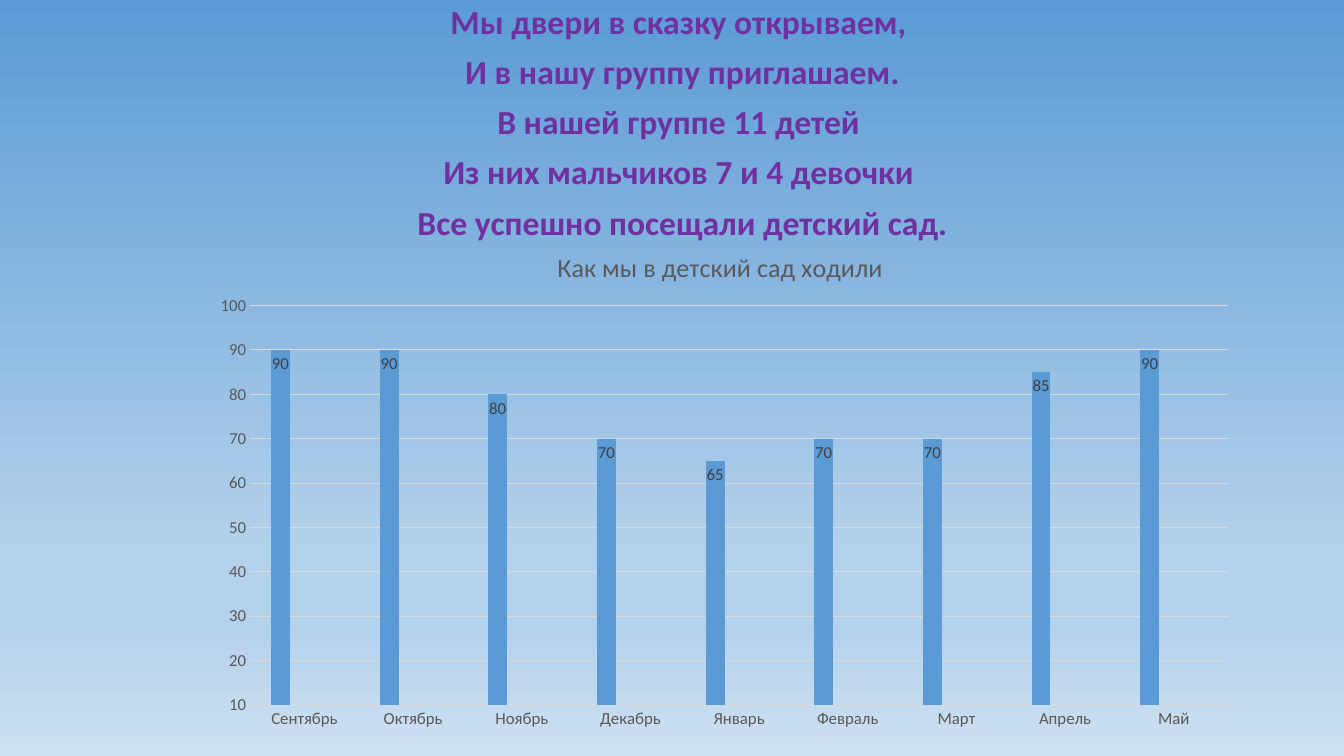
from lxml import etree
from pptx import Presentation
from pptx.chart.data import CategoryChartData
from pptx.dml.color import RGBColor
from pptx.enum.chart import XL_CHART_TYPE, XL_LABEL_POSITION, XL_TICK_MARK
from pptx.enum.text import MSO_ANCHOR, MSO_AUTO_SIZE, PP_ALIGN
from pptx.oxml.ns import qn
from pptx.util import Inches, Pt

COLUMNS = XL_CHART_TYPE.COLUMN_CLUSTERED
INSIDE_END = XL_LABEL_POSITION.INSIDE_END
NO_TICK = XL_TICK_MARK.NONE
CENTER = PP_ALIGN.CENTER
TOP = MSO_ANCHOR.TOP
NO_FIT = MSO_AUTO_SIZE.NONE

FONT = "Calibri"
PURPLE = RGBColor(0x70, 0x30, 0xA0)
BLUE = RGBColor(0x5B, 0x9B, 0xD5)
ORANGE = RGBColor(0xED, 0x7D, 0x31)
GRAY = RGBColor(0xA5, 0xA5, 0xA5)
SKY = RGBColor(0xB5, 0xD2, 0xEC)
PALE = RGBColor(0xCE, 0xE1, 0xF2)
BLACK = RGBColor(0, 0, 0)
AXIS_TEXT = RGBColor(0x59, 0x59, 0x59)
LABEL_TEXT = RGBColor(0x40, 0x40, 0x40)
GRID = RGBColor(0xD9, 0xD9, 0xD9)

BACKGROUND_STOPS = [(0, BLUE), (74, SKY), (83, SKY), (100, PALE)]
POEM = [
    "Мы двери в сказку открываем,",
    " И в нашу группу приглашаем.",
    "В нашей группе 11 детей",
    "Из них мальчиков 7 и 4 девочки",
    " Все успешно посещали детский сад.",
]
CHART_TITLE = "Как мы в детский сад ходили "
ATTENDANCE = {
    "Сентябрь": 90, "Октябрь": 90, "Ноябрь": 80,
    "Декабрь": 70, "Январь": 65, "Февраль": 70,
    "Март": 70, "Апрель": 85, "Май": 90,
}
PLOT_AREA = {"x": 0.05, "y": 0.15, "w": 0.93, "h": 0.78}


def set_font(font, size, color, bold=False):
    font.name = FONT
    font.size = Pt(size)
    font.bold = bold
    font.color.rgb = color


def paint_background(slide):
    fill = slide.background.fill
    fill.gradient()
    fill.gradient_angle = 270  # counter-clockwise: top to bottom
    # The public gradient has two stops, so the list is rebuilt in XML
    stops = slide.element.find(".//" + qn("a:gsLst"))
    for stop in list(stops):
        stops.remove(stop)
    for percent, color in BACKGROUND_STOPS:
        stop = etree.SubElement(stops, qn("a:gs"), pos=str(percent * 1000))
        etree.SubElement(stop, qn("a:srgbClr"), val=str(color))


def write_poem(box):
    box.left, box.top = Inches(1.73), Inches(0)
    box.width, box.height = Inches(10), Inches(2.5)
    frame = box.text_frame
    frame.word_wrap = True
    frame.auto_size = NO_FIT
    frame.vertical_anchor = TOP
    for index, line in enumerate(POEM):
        para = frame.add_paragraph() if index else frame.paragraphs[0]
        para.alignment = CENTER
        para.line_spacing = 0.9
        para.space_before = Pt(10 if index else 0)
        span = para.add_run()
        span.text = line
        set_font(span.font, 24, PURPLE, bold=True)


def style_axis(axis):
    axis.major_tick_mark = axis.minor_tick_mark = NO_TICK
    set_font(axis.tick_labels.font, 12, AXIS_TEXT)


def style_line(line):
    line.color.rgb = GRID
    line.width = Pt(0.75)


def style_series(series, color):
    series.format.fill.solid()
    series.format.fill.fore_color.rgb = color
    series.invert_if_negative = False
    labels = series.data_labels
    labels.show_value = True
    labels.position = INSIDE_END
    set_font(labels.font, 12, LABEL_TEXT)


def place_plot(chart):
    plot_area = chart.element.find(".//" + qn("c:plotArea"))
    layout = plot_area.find(qn("c:layout"))
    if layout is None:
        layout = etree.Element(qn("c:layout"))
        plot_area.insert(0, layout)
    manual = etree.SubElement(layout, qn("c:manualLayout"))
    etree.SubElement(manual, qn("c:layoutTarget"), val="inner")
    for side in "xy":
        etree.SubElement(manual, qn(f"c:{side}Mode"), val="edge")
    for name, share in PLOT_AREA.items():
        etree.SubElement(manual, qn(f"c:{name}"), val=str(share))


def add_attendance_chart(slide):
    data = CategoryChartData()
    data.categories = list(ATTENDANCE)
    data.add_series("Series 1", list(ATTENDANCE.values()))
    for name in ("Series 2", "Series 3"):
        data.add_series(name, [None] * len(ATTENDANCE))
    chart = slide.shapes.add_chart(
        COLUMNS, Inches(1.96), Inches(2.27), Inches(10.43), Inches(5.08), data
    ).chart
    set_font(chart.font, 10, BLACK)
    chart.has_legend = False

    # Title
    chart.has_title = True
    chart.chart_title.include_in_layout = False
    span = chart.chart_title.text_frame.paragraphs[0].add_run()
    span.text = CHART_TITLE
    set_font(span.font, 18.6, AXIS_TEXT)

    # Axes
    months, percent = chart.category_axis, chart.value_axis
    for axis in (months, percent):
        style_axis(axis)
    style_line(months.format.line)
    percent.format.line.fill.background()
    percent.minimum_scale, percent.maximum_scale = 10, 100
    percent.major_unit = 10
    percent.has_major_gridlines = True
    style_line(percent.major_gridlines.format.line)

    # Columns
    plot = chart.plots[0]
    plot.vary_by_categories = False
    plot.gap_width, plot.overlap = 219, -27
    for series, color in zip(plot.series, (BLUE, ORANGE, GRAY)):
        style_series(series, color)
    place_plot(chart)


def main():
    deck = Presentation()
    deck.slide_width, deck.slide_height = Inches(13.33), Inches(7.5)
    # The title slide layout supplies the subtitle that holds the poem
    page = deck.slides.add_slide(deck.slide_layouts[0])
    title = page.shapes.title.element
    title.getparent().remove(title)
    paint_background(page)
    write_poem(page.placeholders[1])
    add_attendance_chart(page)
    deck.save("out.pptx")


if __name__ == "__main__":
    main()
